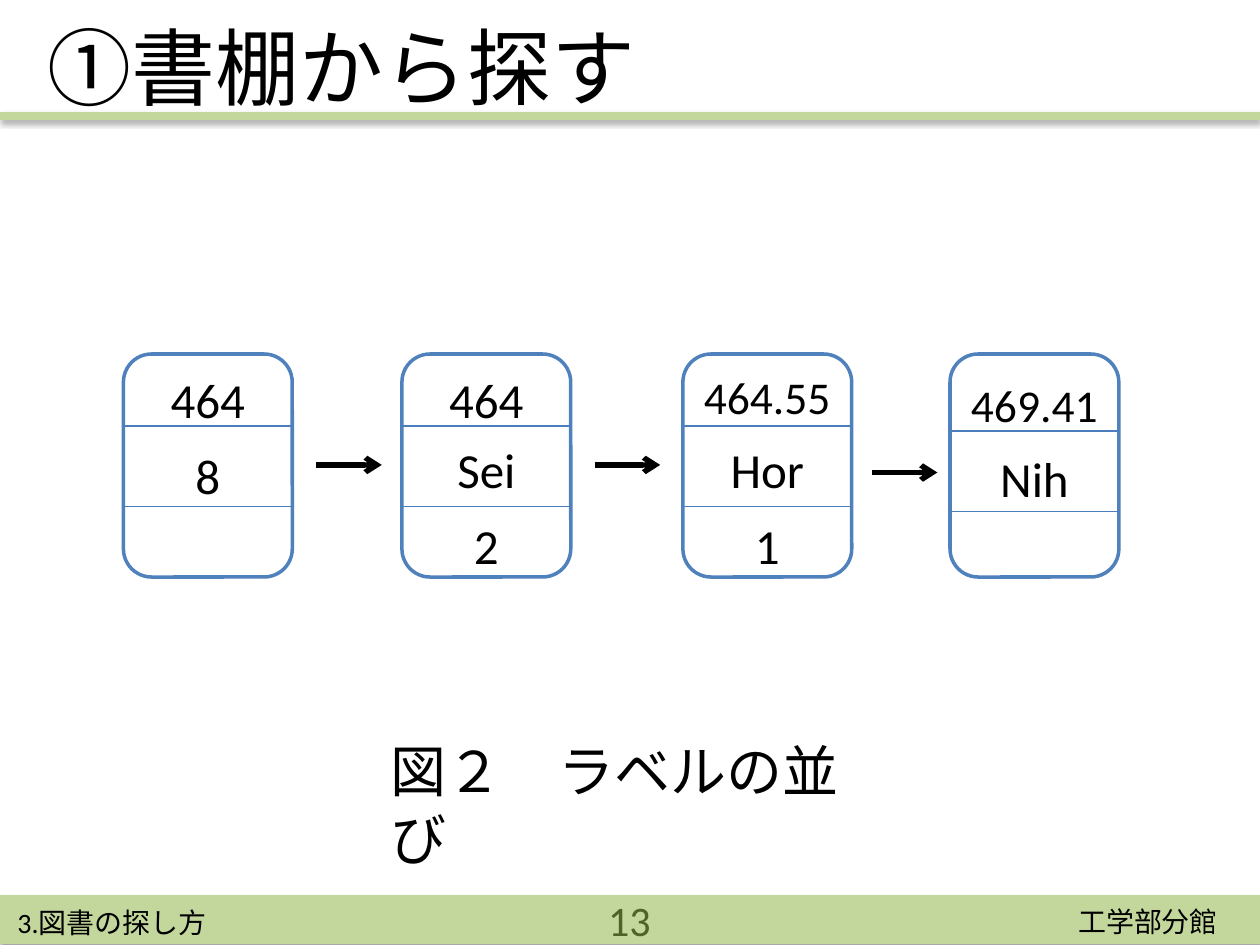
from lxml.etree import SubElement
from pptx import Presentation
from pptx.dml.color import RGBColor
from pptx.enum.shapes import MSO_CONNECTOR, MSO_SHAPE
from pptx.enum.text import MSO_ANCHOR, PP_ALIGN
from pptx.oxml.ns import qn
from pptx.util import Inches, Pt

BLACK = RGBColor(0, 0, 0)
WHITE = RGBColor(0xFF, 0xFF, 0xFF)
GREEN = RGBColor(0xC3, 0xD6, 0x9B)
OLIVE = RGBColor(0x4F, 0x62, 0x28)
BLUE = RGBColor(0x4F, 0x81, 0xBD)
RULE = RGBColor(0x4B, 0x7E, 0xBC)

WIDTH, HEIGHT = 10, 7.5
TITLE = ("①書棚から探す", (0.28, 0.06, 5.35, 0.93))
BARS = [(7.3, 28), (0.92, 4.5)]  # height on slide, weight

# text, box, format
NOTES = [
    ("工学部分館", (8.46, 7.13, 1.34, 0.37), {"size": 16}),
    ("図２\u3000ラベルの並び", (3, 5.8, 3.97, 0.64), {"size": 32}),
    ("13", (3.83, 7.1, 2.33, 0.4),
     {"size": 24, "color": OLIVE, "align": PP_ALIGN.CENTER, "anchor": MSO_ANCHOR.MIDDLE}),
    ("3.図書の探し方", (0.04, 7.14, 2.05, 0.37), {"size": 16}),
]

# Spine labels: left edge, first rule, then (text, top) for each row
LABELS = [
    (0.98, 3.38, [("464", 2.88), ("8", 3.49)]),
    (3.19, 3.38, [("464", 2.88), ("Sei", 3.44), ("2", 4.04)]),
    (5.42, 3.38, [("464.55", 2.88), ("Hor", 3.44), ("1", 4.04)]),
    (7.54, 3.42, [("469.41", 2.94), ("Nih", 3.51)]),
]
CARD_W, CARD_H, CARD_TOP, ROW = 1.34, 1.77, 2.81, 0.64
ARROWS = [(2.51, 3.69), (4.72, 3.69), (6.92, 3.75)]
ARROW_W = 0.52


def inch(*sizes):
    return [Inches(size) for size in sizes]


def style(frame, text, size, color=BLACK, align=PP_ALIGN.LEFT, anchor=MSO_ANCHOR.TOP):
    frame.word_wrap = True
    frame.vertical_anchor = anchor
    para = frame.paragraphs[0]
    para.text = text
    para.alignment = align
    font = para.runs[0].font
    for name, value in {"size": Pt(size), "name": "Calibri"}.items():
        setattr(font, name, value)
    font.color.rgb = color


def write(shapes, text, box, **form):
    style(shapes.add_textbox(*inch(*box)).text_frame, text, **form)


def rule(shapes, left, top, width, color, weight):
    """Add a level line without a shadow; return it and its effect list."""
    line = shapes.add_connector(MSO_CONNECTOR.STRAIGHT, *inch(left, top, left + width, top))
    line.line.color.rgb = color
    line.line.width = Pt(weight)
    props = line._element.spPr
    return line, SubElement(props, qn("a:effectLst"))


def bar(shapes, top, weight):
    effects = rule(shapes, 0, top, WIDTH, GREEN, weight)[1]
    shadow = SubElement(effects, qn("a:outerShdw"), blurRad=str(Pt(3.1)),
                        dist=str(Pt(1.8)), dir="5400000", rotWithShape="0")
    tint = SubElement(shadow, qn("a:srgbClr"), val="000000")
    SubElement(tint, qn("a:alpha"), val="35000")


def arrow(shapes, left, top):
    line = rule(shapes, left, top, ARROW_W, BLACK, 3)[0]
    SubElement(line.line._get_or_add_ln(), qn("a:tailEnd"), type="arrow")


def label(shapes, left, first, rows):
    parts = shapes.add_group_shape().shapes
    card = parts.add_shape(MSO_SHAPE.ROUNDED_RECTANGLE, *inch(left, CARD_TOP, CARD_W, CARD_H))
    card.shadow.inherit = False
    card.fill.solid()
    card.fill.fore_color.rgb = WHITE
    card.line.color.rgb = BLUE
    card.line.width = Pt(2)
    for step in range(2):
        rule(parts, left, first + step * ROW, CARD_W, RULE, 1)
    for text, top in rows:
        wide = len(text) > 3
        width, height, size = (CARD_W, 0.54, 26) if wide else (0.87, 0.57, 28)
        box = (left + (CARD_W - width) / 2, top, width, height)
        write(parts, text, box, size=size, align=PP_ALIGN.CENTER)


def main():
    deck = Presentation()
    deck.slide_width, deck.slide_height = inch(WIDTH, HEIGHT)
    slide = deck.slides.add_slide(deck.slide_layouts[5])
    shapes = slide.shapes

    text, box = TITLE
    title = shapes.title
    title.left, title.top, title.width, title.height = inch(*box)
    style(title.text_frame, text, 48, anchor=MSO_ANCHOR.MIDDLE)

    for spot in BARS:
        bar(shapes, *spot)
    for spot in ARROWS:
        arrow(shapes, *spot)
    for item in LABELS:
        label(shapes, *item)
    for text, box, form in NOTES:
        write(shapes, text, box, **form)
    deck.save("out.pptx")


if __name__ == "__main__":
    main()
